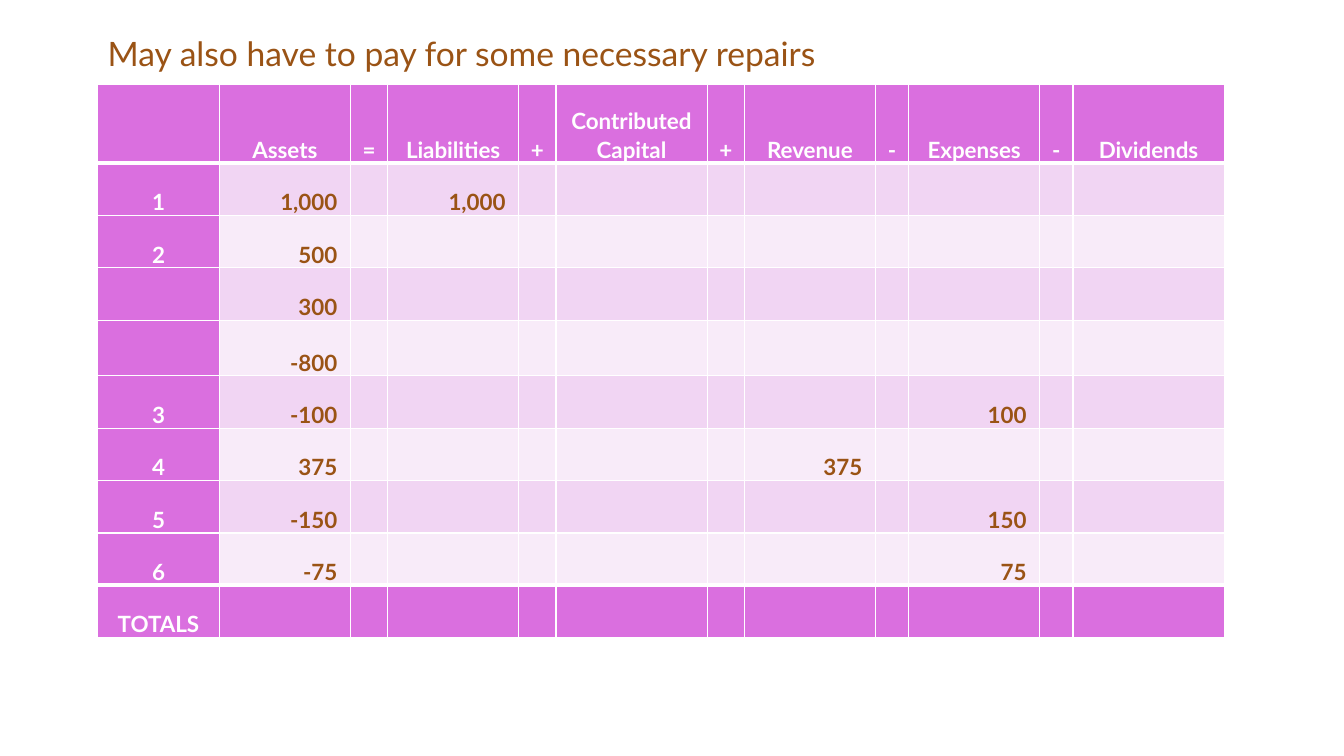
from lxml.etree import fromstring
from pptx import Presentation
from pptx.dml.color import RGBColor
from pptx.enum.text import MSO_ANCHOR as Anchor, MSO_AUTO_SIZE as AutoSize, PP_ALIGN as Align
from pptx.util import Cm, Pt

# Content
HEADLINE = "May also have to pay for some necessary repairs"
ACCOUNTS = ["", "Assets", "=", "Liabilities", "+", "Contributed Capital", "+",
            "Revenue", "-", "Expenses", "-", "Dividends"]
# Each entry: row label, then the amount under each account
ENTRIES = [
    ("1", {"Assets": "1,000", "Liabilities": "1,000"}),
    ("2", {"Assets": "500"}),
    ("", {"Assets": "300"}),
    ("", {"Assets": "-800"}),
    ("3", {"Assets": "-100", "Expenses": "100"}),
    ("4", {"Assets": "375", "Revenue": "375"}),
    ("5", {"Assets": "-150", "Expenses": "150"}),
    ("6", {"Assets": "-75", "Expenses": "75"}),
    ("TOTALS", {}),
]

# Format
FONT = "Lato"
BROWN = RGBColor(0x9A, 0x53, 0x15)
WHITE = RGBColor(0xFF, 0xFF, 0xFF)
ORCHID = RGBColor(0xDA, 0x6F, 0xDF)
BANDS = [RGBColor(0xF1, 0xD5, 0xF3), RGBColor(0xF8, 0xEB, 0xF9)]
LEFT = Cm(2.46)
COLUMN_WIDTHS = [3.07, 3.3, 0.94, 3.3, 0.94, 3.81, 0.94, 3.3, 0.84, 3.3, 0.84, 3.81]
ROW_HEIGHTS = [1.98] + [1.32] * 3 + [1.4] + [1.32] * 5
LAST_ROW = len(ENTRIES)
THIN, THICK = 1, 3
DRAWING_NS = "http://schemas.openxmlformats.org/drawingml/2006/main"


def write(frame, text, size=16, color=WHITE, bold=True, align=Align.CENTER, spacing=1.07):
    line = frame.paragraphs[0]
    line.text = text
    line.alignment = align
    line.line_spacing = spacing
    line.font.name = FONT
    line.font.size = Pt(size)
    line.font.bold = bold
    line.font.color.rgb = color


def add_borders(cell, top, bottom):
    widths = {"lnL": THIN, "lnR": THIN, "lnT": top, "lnB": bottom}
    properties = cell._tc.get_or_add_tcPr()
    for position, (side, width) in enumerate(widths.items()):
        properties.insert(position, fromstring(
            f'<a:{side} xmlns:a="{DRAWING_NS}" w="{Pt(width)}">'
            f'<a:solidFill><a:srgbClr val="{WHITE}"/></a:solidFill></a:{side}>'))


deck = Presentation()
deck.slide_width, deck.slide_height = Cm(33.87), Cm(19.05)
slide = deck.slides.add_slide(deck.slide_layouts[5])

# Headline
headline = slide.shapes.title
headline.left, headline.top, headline.width, headline.height = LEFT, Cm(0.69), Cm(22.05), Cm(1.27)
headline.text_frame.auto_size = AutoSize.NONE
write(headline.text_frame, HEADLINE, size=24, color=BROWN, bold=False,
      align=Align.LEFT, spacing=1)

# Ledger grid
ledger = slide.shapes.add_table(
    len(ROW_HEIGHTS), len(ACCOUNTS), LEFT, Cm(2.13),
    Cm(sum(COLUMN_WIDTHS)), Cm(sum(ROW_HEIGHTS))).table
ledger.first_col = ledger.last_row = True
for column, width in zip(ledger.columns, COLUMN_WIDTHS):
    column.width = Cm(width)
for row, height in zip(ledger.rows, ROW_HEIGHTS):
    row.height = Cm(height)

# Ledger cells
rows = [ACCOUNTS] + [[label] + [amounts.get(account, "") for account in ACCOUNTS[1:]]
                     for label, amounts in ENTRIES]
for r, texts in enumerate(rows):
    for c, text in enumerate(texts):
        cell = ledger.cell(r, c)
        is_heading = r in (0, LAST_ROW) or c == 0
        cell.fill.solid()
        cell.fill.fore_color.rgb = ORCHID if is_heading else BANDS[(r - 1) % 2]
        cell.vertical_anchor = Anchor.BOTTOM
        cell.margin_top = cell.margin_bottom = 0
        cell.margin_left = Cm(0.18)
        cell.margin_right = Cm(0.18 if is_heading else 0.33)
        add_borders(cell, top=THICK if r in (1, LAST_ROW) else THIN,
                    bottom=THICK if r in (0, LAST_ROW - 1) else THIN)
        if is_heading:
            write(cell.text_frame, text)
        else:
            write(cell.text_frame, text, color=BROWN, align=Align.RIGHT)

deck.save("out.pptx")
